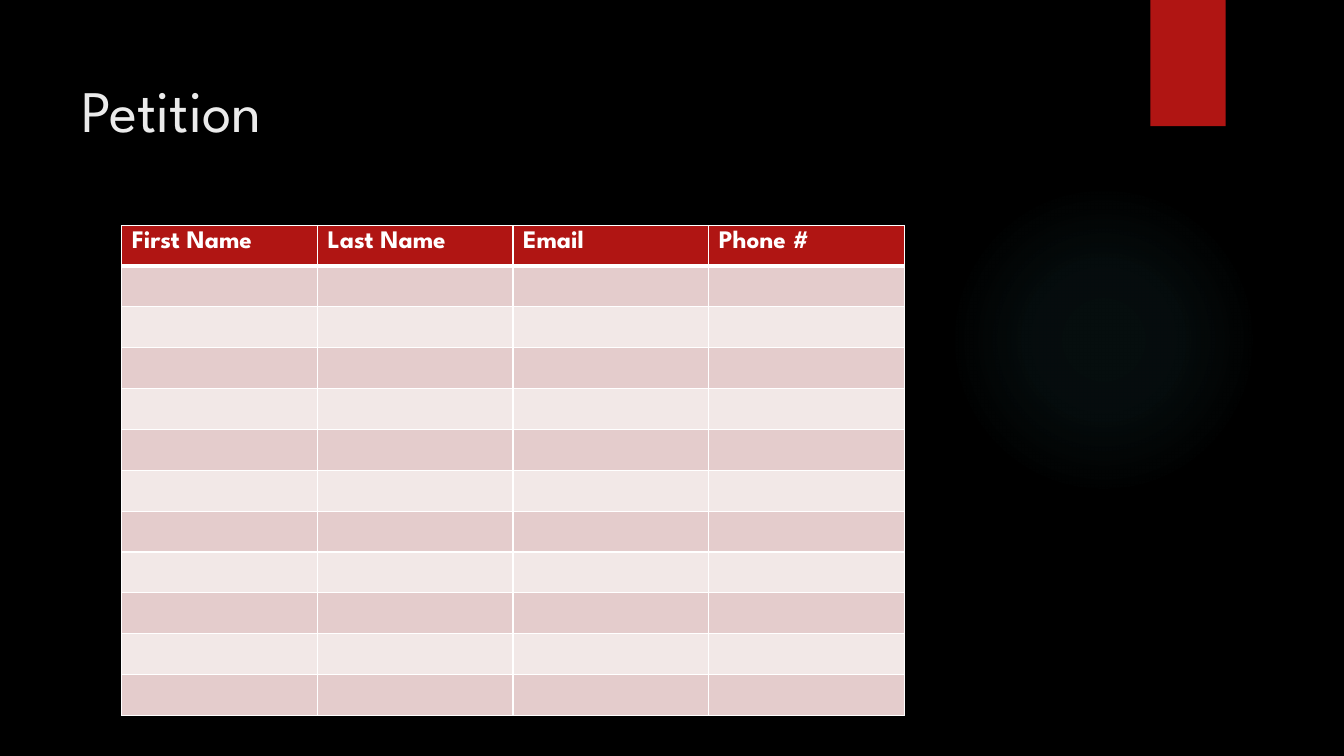
from lxml.etree import SubElement as Sub
from pptx import Presentation
from pptx.dml.color import RGBColor
from pptx.enum.shapes import MSO_SHAPE as Kind
from pptx.enum.text import MSO_ANCHOR as Anchor, PP_ALIGN as Align
from pptx.oxml import parse_xml
from pptx.oxml.ns import nsdecls, qn
from pptx.util import Cm, Pt

BLACK = RGBColor(0x00, 0x00, 0x00)
WHITE = RGBColor(0xFF, 0xFF, 0xFF)
PALE = RGBColor(0xEB, 0xEB, 0xEB)
RED = RGBColor(0xB0, 0x15, 0x13)
ROSE = RGBColor(0xE4, 0xCC, 0xCC)
BLUSH = RGBColor(0xF2, 0xE8, 0xE7)
TEAL = RGBColor(0x50, 0xB9, 0xC1)

HEADS = ["First Name", "Last Name", "Email", "Phone #"]
ROWS = 12


class Deck:
    face = "League Spartan"

    def __init__(self):
        self.prs = Presentation()
        self.prs.slide_width, self.prs.slide_height = Cm(33.87), Cm(19.05)
        self.slide = self.prs.slides.add_slide(self.prs.slide_layouts[5])
        fill = self.slide.background.fill
        fill.solid()
        fill.fore_color.rgb = BLACK

    def style(self, para, size, color, bold=False):
        para.alignment = Align.LEFT
        for run in para.runs:
            font = run.font
            font.name, font.size, font.bold = self.face, Pt(size), bold
            font.color.rgb = color

    def shape(self, kind, x, y, w, h, color):
        item = self.slide.shapes.add_shape(kind, Cm(x), Cm(y), Cm(w), Cm(h))
        item.shadow.inherit = False
        item.fill.solid()
        item.fill.fore_color.rgb = color
        item.line.fill.background()
        return item

    def glow(self, x, y, size, color, stops):
        """Draw a round glow; stops pair a position with an opacity, in percent."""
        props = self.shape(Kind.OVAL, x, y, size, size, color)._element.spPr
        marks = "".join(
            f'<a:gs pos="{pos * 1000}"><a:srgbClr val="{color}">'
            f'<a:alpha val="{alpha * 1000}"/></a:srgbClr></a:gs>'
            for pos, alpha in stops)
        grad = parse_xml(
            f'<a:gradFill {nsdecls("a")}><a:gsLst>{marks}</a:gsLst>'
            '<a:path path="circle"><a:fillToRect l="50000" t="50000" '
            'r="50000" b="50000"/></a:path></a:gradFill>')
        props.replace(props.find(qn("a:solidFill")), grad)

    def title(self, text, x, y, w, h):
        item = self.slide.shapes.title
        item.left, item.top, item.width, item.height = Cm(x), Cm(y), Cm(w), Cm(h)
        frame = item.text_frame
        frame.text = text
        frame.word_wrap = True
        frame.vertical_anchor = Anchor.TOP
        frame.margin_top = Cm(0.58)
        self.style(frame.paragraphs[0], 42, PALE)

    def edge(self, cell, base):
        """Rule all four sides of a cell, with its own widths above and below."""
        props = cell._tc.get_or_add_tcPr()
        widths = {"L": 1, "R": 1, "T": 3 if base == 1 else 1, "B": 3 if base == 0 else 1}
        for spot, (side, width) in enumerate(widths.items()):
            line = props.makeelement(qn(f"a:ln{side}"), {"w": str(Pt(width))})
            color = Sub(Sub(line, qn("a:solidFill")), qn("a:srgbClr"))
            color.set("val", str(WHITE))
            props.insert(spot, line)

    def table(self, heads, rows, x, y, wide, high):
        """Build a banded table with column width wide and row height high."""
        cols = len(heads)
        grid = self.slide.shapes.add_table(
            rows, cols, Cm(x), Cm(y), Cm(wide * cols), Cm(high * rows)).table
        for col in grid.columns:
            col.width = Cm(wide)
        for r, row in enumerate(grid.rows):
            row.height = Cm(high)
            for c, cell in enumerate(row.cells):
                cell.fill.solid()
                cell.fill.fore_color.rgb = RED if r == 0 else ROSE if r % 2 else BLUSH
                self.edge(cell, r)
                if r == 0:
                    cell.text = heads[c]
                    self.style(cell.text_frame.paragraphs[0], 18, WHITE, True)


def main():
    deck = Deck()
    deck.glow(23.9, 4.65, 7.82, TEAL, [(0, 7), (36, 6), (69, 0)])
    deck.shape(Kind.RECTANGLE, 28.99, 0, 1.9, 3.18, RED)
    deck.title("Petition", 1.8, 1.27, 26.14, 3.89)
    deck.table(HEADS, ROWS, 3.07, 5.69, 4.93, 1.01)
    deck.prs.save("out.pptx")


if __name__ == "__main__":
    main()
